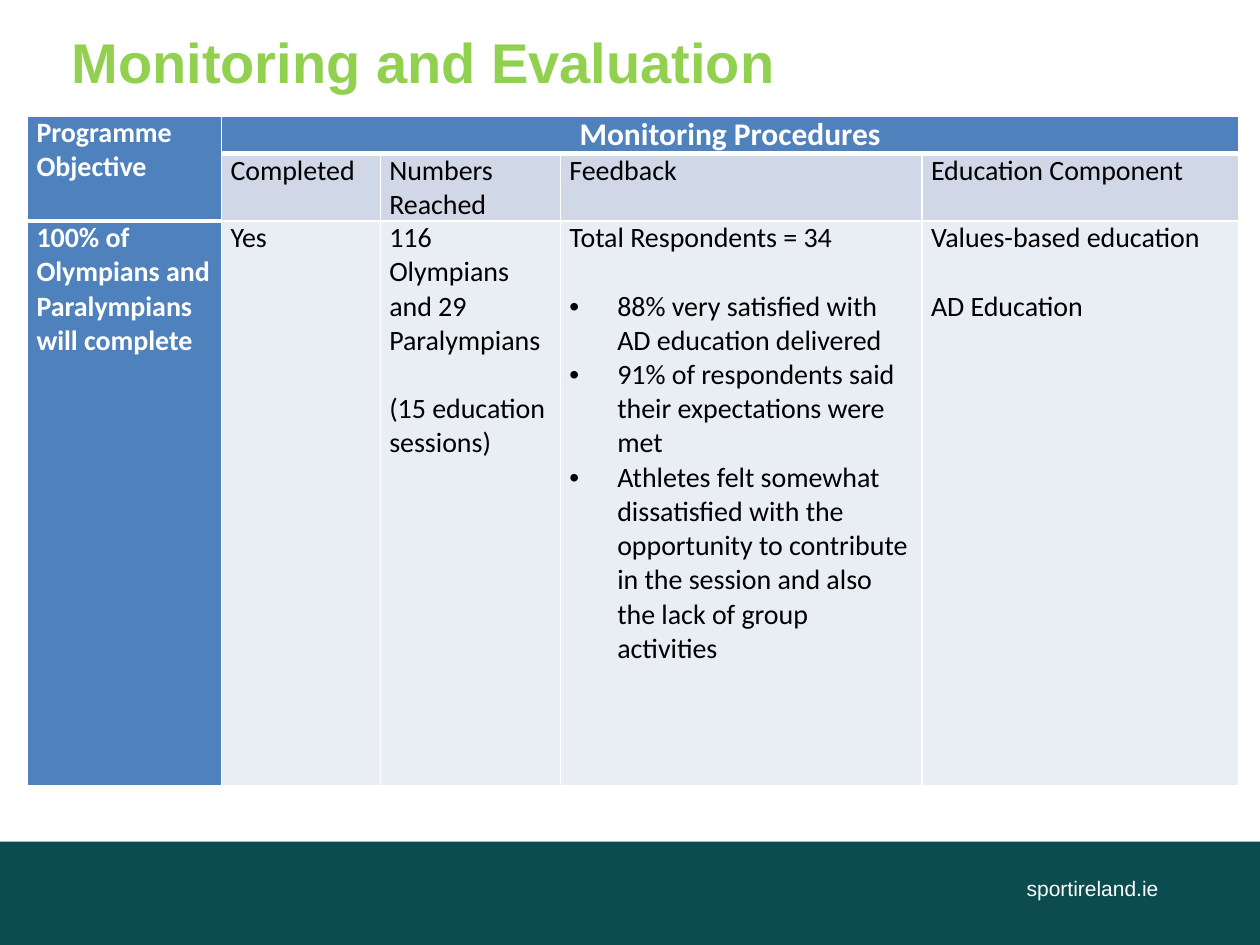
from lxml.etree import SubElement
from pptx import Presentation
from pptx.dml.color import RGBColor
from pptx.enum.shapes import MSO_SHAPE
from pptx.enum.text import PP_ALIGN
from pptx.oxml import parse_xml
from pptx.oxml.ns import nsdecls, qn
from pptx.util import Inches, Pt

WHITE = RGBColor(0xFF, 0xFF, 0xFF)
BLACK = RGBColor(0, 0, 0)
GREEN = RGBColor(0x92, 0xD0, 0x50)
TEAL = RGBColor(0x0A, 0x4C, 0x4F)
BLUE = RGBColor(0x4F, 0x81, 0xBD)
MID = RGBColor(0xD0, 0xD8, 0xE8)
PALE = RGBColor(0xE9, 0xED, 0xF4)

COLS = [1.54, 1.26, 1.43, 2.87, 2.51]
ROWS = [0.3, 0.53, 4.48]
HEADS = ["Completed", "Numbers Reached", "Feedback", "Education Component"]
GOAL = "100% of Olympians and Paralympians will complete"
FACTS = [
    ["Yes"],
    ["116 Olympians and 29 Paralympians", "(15 education sessions)"],
    ["Total Respondents = 34",
     "• 88% very satisfied with AD education delivered",
     "• 91% of respondents said their expectations were met",
     "• Athletes felt somewhat dissatisfied with the opportunity to contribute "
     "in the session and also the lack of group activities"],
    ["Values-based education", "AD Education"],
]


class Deck:
    def __init__(self):
        self.prs = Presentation()
        self.prs.slide_width, self.prs.slide_height = Inches(10), Inches(7.5)
        self.slide = self.prs.slides.add_slide(self.prs.slide_layouts[6])

    def style(self, para, size, color, bold=False, face="Calibri"):
        font = para.font
        font.name, font.size, font.bold = face, Pt(size), bold
        font.color.rgb = color

    def band(self, x, y, w, h, color):
        box = self.slide.shapes.add_shape(
            MSO_SHAPE.RECTANGLE, Inches(x), Inches(y), Inches(w), Inches(h))
        box.shadow.inherit = False
        box.fill.solid()
        box.fill.fore_color.rgb = color
        box.line.fill.background()

    def text(self, x, y, w, h, words, size, color, bold=False, top=0.05):
        box = self.slide.shapes.add_textbox(
            Inches(x), Inches(y), Inches(w), Inches(h))
        frame = box.text_frame
        frame.word_wrap = True
        frame.margin_top = Inches(top)
        frame.text = words
        self.style(frame.paragraphs[0], size, color, bold, "Arial")

    def table(self, x, y, cols, rows):
        frame = self.slide.shapes.add_table(
            len(rows), len(cols), Inches(x), Inches(y),
            Inches(sum(cols)), Inches(sum(rows)))
        grid = frame.table
        for col, width in zip(grid.columns, cols):
            col.width = Inches(width)
        for row, height in zip(grid.rows, rows):
            row.height = Inches(height)
        return grid

    def edge(self, cell, top, base):
        """Draw white cell borders, with top and bottom widths in points."""
        props = cell._tc.get_or_add_tcPr()
        for spot, (side, width) in enumerate(
                [("L", 1), ("R", 1), ("T", top), ("B", base)]):
            props.insert(spot, parse_xml(
                f'<a:ln{side} {nsdecls("a")} w="{Pt(width)}"><a:solidFill>'
                f'<a:srgbClr val="{WHITE}"/></a:solidFill></a:ln{side}>'))

    def bullet(self, para):
        props = para._p.get_or_add_pPr()
        props.set("marL", str(Inches(0.38)))
        props.set("indent", str(-Inches(0.38)))
        SubElement(props, qn("a:buFont"), typeface="Arial")
        SubElement(props, qn("a:buChar"), char="•")

    def cell(self, cell, lines, fill, color=BLACK, bold=False, size=16):
        """Fill a cell; its second line follows a gap one line high."""
        cell.fill.solid()
        cell.fill.fore_color.rgb = fill
        cell.margin_left = cell.margin_right = Inches(0.07)
        cell.margin_top = cell.margin_bottom = 0
        frame = cell.text_frame
        for i, line in enumerate(lines):
            para = frame.add_paragraph() if i else frame.paragraphs[0]
            para.text = line.removeprefix("• ")
            if i == 1:
                para.space_before = Pt(19.5)
            if line.startswith("•"):
                self.bullet(para)
            self.style(para, size, color, bold)


def main():
    deck = Deck()
    deck.band(0, 6.68, 10, 0.82, TEAL)
    deck.text(8.05, 6.9, 1.68, 0.4, "sportireland.ie", 12, WHITE)
    deck.text(0.47, 0.12, 9.14, 0.9, "Monitoring and Evaluation",
              32, GREEN, True, 0.1)

    grid = deck.table(0.22, 0.92, COLS, ROWS)
    for r in range(len(ROWS)):
        for c in range(len(COLS)):
            thick = 1 if c == 0 else 0
            deck.edge(grid.cell(r, c), 3 if r == 1 + thick else 1,
                      3 if r == thick else 1)
    grid.cell(0, 0).merge(grid.cell(1, 0))
    grid.cell(0, 1).merge(grid.cell(0, 4))

    deck.cell(grid.cell(0, 0), ["Programme Objective"], BLUE, WHITE, True)
    lead = grid.cell(0, 1)
    deck.cell(lead, ["Monitoring Procedures"], BLUE, WHITE, True, 18)
    lead.text_frame.paragraphs[0].alignment = PP_ALIGN.CENTER
    deck.cell(grid.cell(2, 0), [GOAL], BLUE, WHITE, True)
    for c, (head, fact) in enumerate(zip(HEADS, FACTS), 1):
        deck.cell(grid.cell(1, c), [head], MID)
        deck.cell(grid.cell(2, c), fact, PALE)
    deck.prs.save("out.pptx")


if __name__ == "__main__":
    main()
